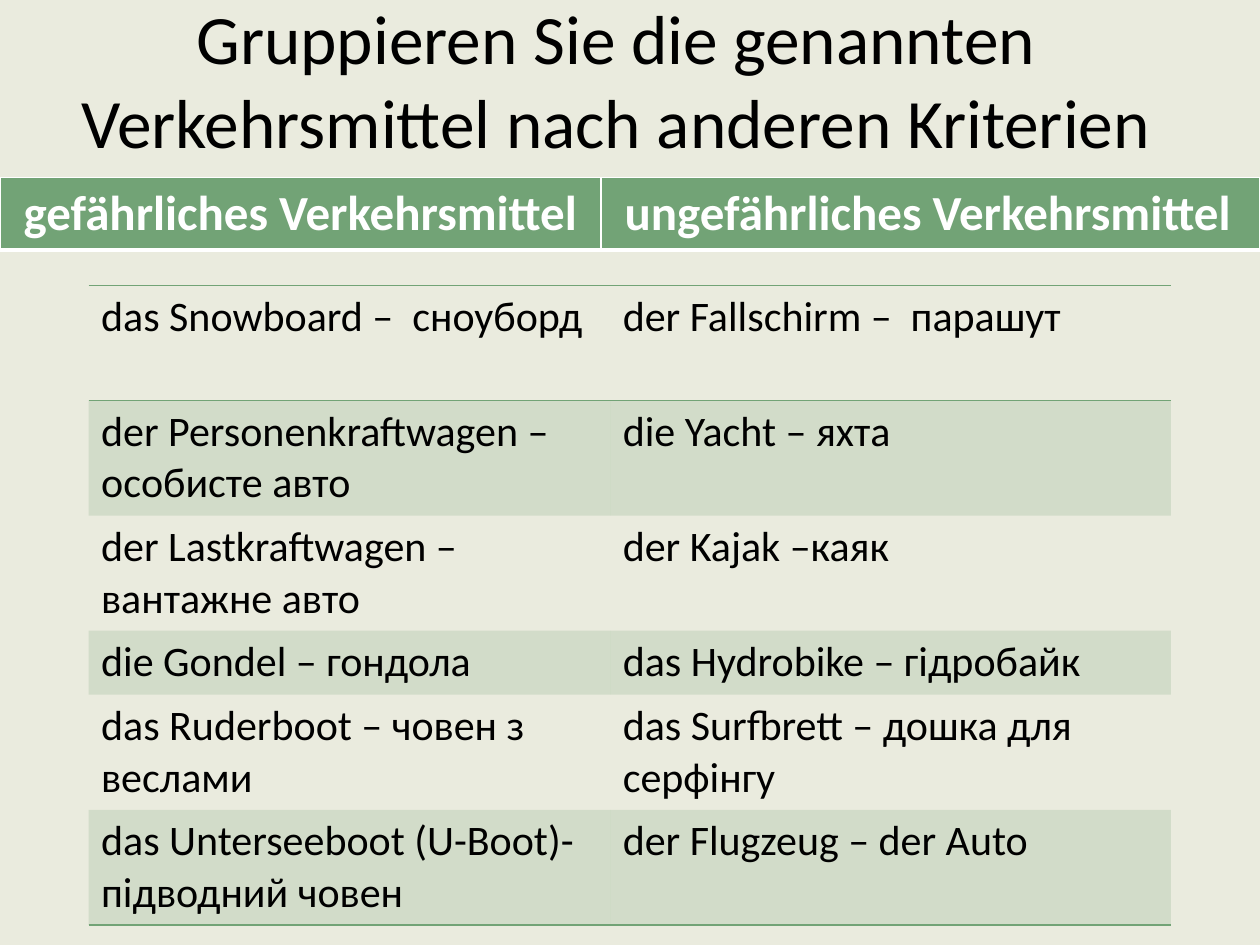
"""Build a slide that sorts means of transport into dangerous and safe ones."""
from dataclasses import dataclass

from lxml import etree
from pptx import Presentation
from pptx import util as u
from pptx.dml.color import RGBColor
from pptx.enum import text
from pptx.oxml import ns

TITLE = "Gruppieren Sie die genannten Verkehrsmittel nach anderen Kriterien"
HEADINGS = [(" gefährliches Verkehrsmittel", " ungefährliches Verkehrsmittel")]
VEHICLES = [
    ("das Snowboard –  сноуборд", "der Fallschirm –  парашут"),
    ("der Personenkraftwagen – особисте авто", "die Yacht – яхта"),
    ("der Lastkraftwagen – вантажне авто", "der Kajak –каяк"),
    ("die Gondel – гондола", "das Hydrobike – гідробайк"),
    ("das Ruderboot – човен з веслами", "das Surfbrett – дошка для серфінгу"),
    ("das Unterseeboot (U-Boot)- підводний човен", "der Flugzeug – der Auto"),
]
SINGLE, DOUBLE = 36.4, 65.75
VEHICLE_HEIGHTS = [DOUBLE, DOUBLE, DOUBLE, SINGLE, DOUBLE, DOUBLE]
PLAIN_STYLE = "{2D5ABB26-0587-4C30-8999-92F81FD0307C}"


@dataclass(frozen=True)
class Theme:
    background: str = "EAEBDE"
    green: str = "72A376"
    white: str = "FFFFFF"
    black: str = "000000"
    font: str = "Calibri"
    title_size: float = 39.6
    heading_size: float = 28
    body_size: float = 24
    band_alpha: int = 20


THEME = Theme()


def add_run(paragraph, words, size, color, bold=False):
    run = paragraph.add_run()
    run.text = words
    run.font.name = THEME.font
    run.font.size = u.Pt(size)
    run.font.bold = bold
    run.font.color.rgb = RGBColor.from_string(color)


def set_borders(cell, color, widths):
    properties = cell._tc.get_or_add_tcPr()
    for side in "LRTB":
        if side in widths:
            line = etree.SubElement(properties, ns.qn(f"a:ln{side}"), w=str(u.Pt(widths[side])))
            fill = etree.SubElement(line, ns.qn("a:solidFill"))
            etree.SubElement(fill, ns.qn("a:srgbClr"), val=color)


def set_fill(cell, color, alpha=100):
    cell.fill.solid()
    cell.fill.fore_color.rgb = RGBColor.from_string(color)
    if alpha < 100:
        tone = cell._tc.tcPr.find(".//" + ns.qn("a:solidFill") + "[last()]/" + ns.qn("a:srgbClr"))
        tone = cell._tc.tcPr.find(ns.qn("a:solidFill")).find(ns.qn("a:srgbClr"))
        etree.SubElement(tone, ns.qn("a:alpha"), val=str(alpha * 1000))


def add_table(slide, rows, left, top, widths, heights, size, color, bold=False):
    frame = slide.shapes.add_table(
        len(rows), len(widths), u.Pt(left), u.Pt(top), u.Pt(sum(widths)), u.Pt(sum(heights)))
    table = frame.table
    table._tbl.tblPr.find(ns.qn("a:tableStyleId")).text = PLAIN_STYLE
    for column, width in zip(table.columns, widths):
        column.width = u.Pt(width)
    for row, height, entries in zip(table.rows, heights, rows):
        row.height = u.Pt(height)
        for cell, words in zip(row.cells, entries):
            add_run(cell.text_frame.paragraphs[0], words, size, color, bold)
    return table


def add_title(slide):
    title = slide.shapes.title
    title.left, title.top, title.width, title.height = map(u.Pt, (28, 0, 648, 90))
    frame = title.text_frame
    frame.auto_size = text.MSO_AUTO_SIZE.NONE
    frame.word_wrap = True
    frame.vertical_anchor = text.MSO_ANCHOR.MIDDLE
    paragraph = frame.paragraphs[0]
    paragraph.alignment = text.PP_ALIGN.CENTER
    add_run(paragraph, TITLE, THEME.title_size, THEME.black)


def add_headings(slide):
    table = add_table(slide, HEADINGS, 0, 101.5, (343.4, 376.6), [40.5],
                      THEME.heading_size, THEME.white, bold=True)
    for cell in table.iter_cells():
        set_borders(cell, THEME.white, {"L": 1, "R": 1, "T": 1, "B": 3})
        set_fill(cell, THEME.green)


def add_vehicles(slide):
    table = add_table(slide, VEHICLES, 50.6, 163.1, (298.1, 320.4), VEHICLE_HEIGHTS,
                      THEME.body_size, THEME.black)
    borders = {0: {"T": 1, "B": 1}, len(VEHICLES) - 1: {"B": 1}}
    for index, row in enumerate(table.rows):
        for cell in row.cells:
            set_borders(cell, THEME.green, borders.get(index, {}))
            if index % 2:
                set_fill(cell, THEME.green, THEME.band_alpha)


def main():
    presentation = Presentation()
    presentation.slide_width, presentation.slide_height = u.Pt(720), u.Pt(540)
    slide = presentation.slides.add_slide(presentation.slide_layouts[5])
    slide.background.fill.solid()
    slide.background.fill.fore_color.rgb = RGBColor.from_string(THEME.background)
    add_title(slide)
    add_headings(slide)
    add_vehicles(slide)
    presentation.save("out.pptx")


if __name__ == "__main__":
    main()
